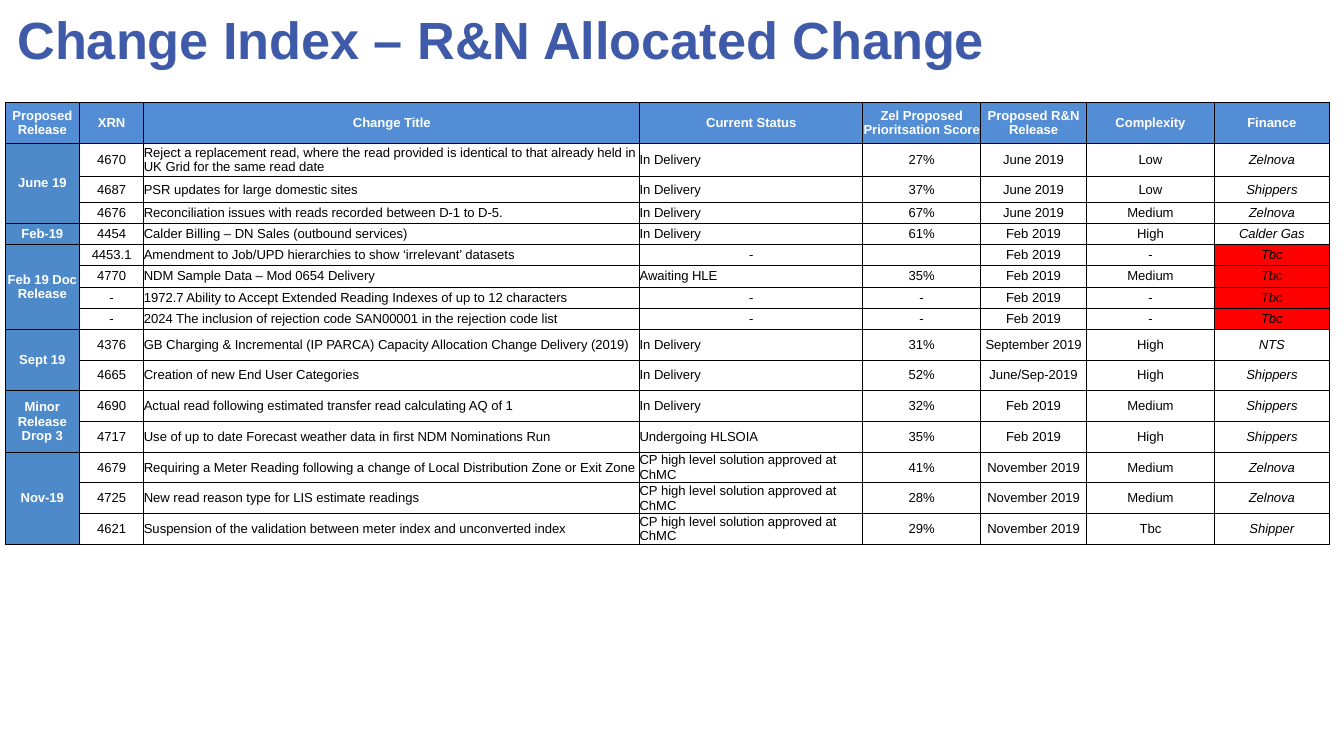
from lxml import etree
from pptx import Presentation
from pptx import util as u
from pptx.dml.color import RGBColor
from pptx.enum import text
from pptx.oxml import ns

COLOURS = {
    "title": "3E5AA8",
    "header": "538DD5",
    "release": "4E8ACA",
    "alert": "FF0000",
    "white": "FFFFFF",
    "black": "000000",
}
FONT = "Arial"
COLUMN_WIDTHS = [1.4, 1.22, 9.37, 4.22, 2.22, 2.01, 2.41, 2.18]
ROW_HEIGHTS = [0.76, 0.64, 0.48] + [0.4] * 6 + [0.58] * 7
TITLE_COLUMN, STATUS_COLUMN, FINANCE_COLUMN = 2, 3, 7
HEADERS = [
    "Proposed Release", "XRN", "Change Title", "Current Status",
    "Zel Proposed Prioritsation Score", "Proposed R&N Release",
    "Complexity", "Finance",
]
DELIVERY = "In Delivery"
APPROVED = "CP high level solution approved at ChMC"
RELEASES = [
    ("June 19", [
        ("4670", "Reject a replacement read, where the read provided is identical to "
                 "that already held in UK Grid for the same read date",
         DELIVERY, "27%", "June 2019", "Low", "Zelnova"),
        ("4687", "PSR updates for large domestic sites",
         DELIVERY, "37%", "June 2019", "Low", "Shippers"),
        ("4676", "Reconciliation issues with reads recorded between D-1 to D-5.",
         DELIVERY, "67%", "June 2019", "Medium", "Zelnova"),
    ]),
    ("Feb-19", [
        ("4454", "Calder Billing – DN Sales (outbound services)",
         DELIVERY, "61%", "Feb 2019", "High", "Calder Gas"),
    ]),
    ("Feb 19 Doc Release", [
        ("4453.1", "Amendment to Job/UPD hierarchies to show ‘irrelevant’ datasets",
         "-", "", "Feb 2019", "-", "Tbc"),
        ("4770", "NDM Sample Data – Mod 0654 Delivery",
         "Awaiting HLE", "35%", "Feb 2019", "Medium", "Tbc"),
        ("-", "1972.7 Ability to Accept Extended Reading Indexes of up to 12 characters",
         "-", "-", "Feb 2019", "-", "Tbc"),
        ("-", "2024 The inclusion of rejection code SAN00001 in the rejection code list",
         "-", "-", "Feb 2019", "-", "Tbc"),
    ]),
    ("Sept 19", [
        ("4376", "GB Charging & Incremental (IP PARCA) Capacity Allocation Change "
                 "Delivery (2019)",
         DELIVERY, "31%", "September 2019", "High", "NTS"),
        ("4665", "Creation of new End User Categories",
         DELIVERY, "52%", "June/Sep-2019", "High", "Shippers"),
    ]),
    ("Minor Release Drop 3", [
        ("4690", "Actual read following estimated transfer read calculating AQ of 1",
         DELIVERY, "32%", "Feb 2019", "Medium", "Shippers"),
        ("4717", "Use of up to date Forecast weather data in first NDM Nominations Run",
         "Undergoing HLSOIA", "35%", "Feb 2019", "High", "Shippers"),
    ]),
    ("Nov-19", [
        ("4679", "Requiring a Meter Reading following a change of Local Distribution "
                 "Zone or Exit Zone",
         APPROVED, "41%", "November 2019", "Medium", "Zelnova"),
        ("4725", "New read reason type for LIS estimate readings",
         APPROVED, "28%", "November 2019", "Medium", "Zelnova"),
        ("4621", "Suspension of the validation between meter index and unconverted index",
         APPROVED, "29%", "November 2019", "Tbc", "Shipper"),
    ]),
]


def colour(name):
    return RGBColor.from_string(COLOURS[name])


def format_para(para, size, ink, bold=False, italic=False):
    for span in para.runs:
        span.font.name = FONT
        span.font.size = u.Pt(size)
        span.font.bold = bold
        span.font.italic = italic
        span.font.color.rgb = colour(ink)


def add_borders(cell):
    properties = cell._tc.get_or_add_tcPr()
    for position, side in enumerate(("lnL", "lnR", "lnT", "lnB")):
        line = etree.Element(ns.qn(f"a:{side}"), w=str(u.Pt(0.5)))
        fill = etree.SubElement(line, ns.qn("a:solidFill"))
        etree.SubElement(fill, ns.qn("a:srgbClr"), val=COLOURS["black"])
        properties.insert(position, line)


def fill_cell(cell, words, fill=None, ink="black", bold=False, italic=False, centred=True):
    cell.margin_left = cell.margin_right = cell.margin_top = cell.margin_bottom = 0
    cell.vertical_anchor = text.MSO_ANCHOR.MIDDLE
    if fill:
        cell.fill.solid()
        cell.fill.fore_color.rgb = colour(fill)
    else:
        cell.fill.background()
    add_borders(cell)
    para = cell.text_frame.paragraphs[0]
    para.text = words
    para.alignment = text.PP_ALIGN.CENTER if centred else text.PP_ALIGN.LEFT
    format_para(para, 7, ink, bold, italic)
    if not words:
        para._p.get_or_add_endParaRPr().set("sz", "700")


def add_title(page, left, top, width, height):
    box = page.shapes.add_textbox(left, top, width, height)
    frame = box.text_frame
    frame.word_wrap = True
    frame.vertical_anchor = text.MSO_ANCHOR.MIDDLE
    frame.text = "Change Index – R&N Allocated Change"
    format_para(frame.paragraphs[0], 28, "title", bold=True)


def add_change_table(page, left, top, width, height):
    table = page.shapes.add_table(
        len(ROW_HEIGHTS), len(COLUMN_WIDTHS), left, top, width, height
    ).table
    table.first_row = table.horz_banding = False
    for column, size in zip(table.columns, COLUMN_WIDTHS):
        column.width = u.Cm(size)
    for row, size in zip(table.rows, ROW_HEIGHTS):
        row.height = u.Cm(size)
    for column, header in enumerate(HEADERS):
        fill_cell(table.cell(0, column), header, "header", "white", bold=True)

    first = 1
    for release, changes in RELEASES:
        for row, change in enumerate(changes, first):
            label = release if row == first else ""
            fill_cell(table.cell(row, 0), label, "release", "white", bold=True)
            for column, words in enumerate(change, 1):
                finance = column == FINANCE_COLUMN
                left_aligned = column in (TITLE_COLUMN, STATUS_COLUMN) and words != "-"
                fill_cell(
                    table.cell(row, column), words,
                    fill="alert" if finance and words == "Tbc" else None,
                    italic=finance, centred=not left_aligned,
                )
        last = first + len(changes) - 1
        if last > first:
            table.cell(first, 0).merge(table.cell(last, 0))
        first = last + 1


def main():
    deck = Presentation()
    deck.slide_width, deck.slide_height = u.Cm(25.4), u.Cm(14.28)
    page = deck.slides.add_slide(deck.slide_layouts[6])
    add_change_table(
        page, u.Cm(0.1), u.Cm(1.94), u.Cm(sum(COLUMN_WIDTHS)), u.Cm(sum(ROW_HEIGHTS))
    )
    add_title(page, u.Cm(0.08), u.Cm(0), u.Cm(24.13), u.Cm(1.47))
    deck.save("out.pptx")


if __name__ == "__main__":
    main()
